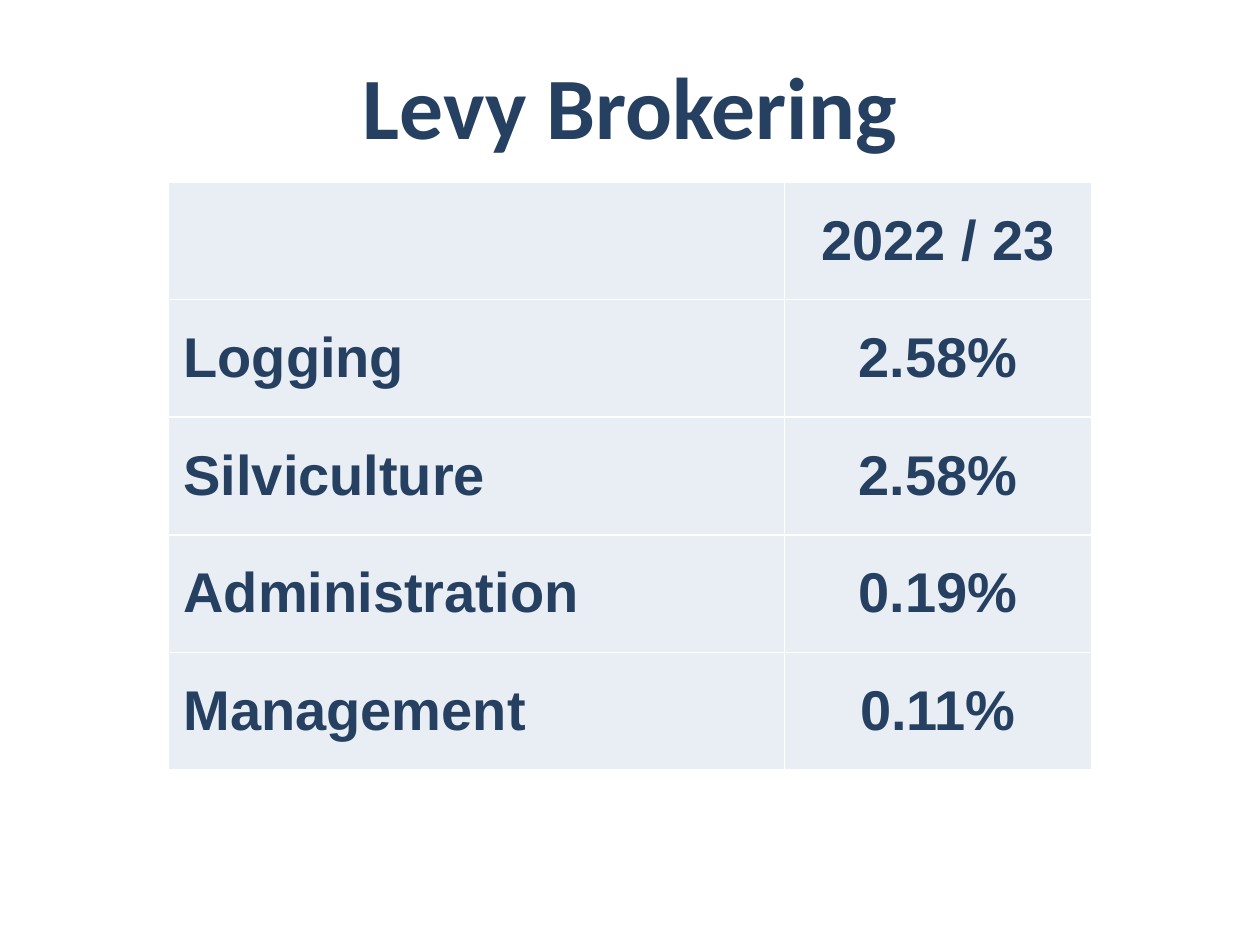
from lxml import etree
from pptx import Presentation
from pptx.enum.text import MSO_ANCHOR, PP_ALIGN
from pptx.dml.color import RGBColor
from pptx.oxml import parse_xml
from pptx.oxml.ns import nsdecls
from pptx.util import Cm, Pt

LEFT, CENTER = PP_ALIGN.LEFT, PP_ALIGN.CENTER
TOP, MIDDLE = MSO_ANCHOR.TOP, MSO_ANCHOR.MIDDLE
COLORS = {"text": "254061", "cell": "E9EDF4", "border": "FFFFFF"}


def write_text(frame, text, font="Arial", size=32, align=CENTER, spacing=None):
    paragraph = frame.paragraphs[0]
    paragraph.alignment = align
    paragraph.line_spacing = spacing
    run = paragraph.add_run()
    run.text = text
    run.font.name = font
    run.font.size = Pt(size)
    run.font.bold = True
    run.font.color.rgb = RGBColor.from_string(COLORS["text"])


def add_borders(cell):
    properties = cell._tc.get_or_add_tcPr()
    for index, side in enumerate(("lnL", "lnR", "lnT", "lnB")):
        border = parse_xml(f'<a:{side} {nsdecls("a")} w="{Pt(1)}"/>')
        fill = etree.SubElement(border, border.tag.replace(side, "solidFill"))
        etree.SubElement(fill, border.tag.replace(side, "srgbClr"), val=COLORS["border"])
        properties.insert(index, border)


presentation = Presentation()
presentation.slide_width = Cm(25.4)
presentation.slide_height = Cm(19.05)
slide = presentation.slides.add_slide(presentation.slide_layouts[6])

title = slide.shapes.add_textbox(Cm(1.27), Cm(1.17), Cm(22.86), Cm(3.18))
title.text_frame.word_wrap = True
title.text_frame.vertical_anchor = TOP
write_text(title.text_frame, "Levy Brokering", font="Calibri", size=50, spacing=0.9)

levy_rows = [
    ("", "2022 / 23"),
    ("Logging", "2.58%"),
    ("Silviculture", "2.58%"),
    ("Administration", "0.19%"),
    ("Management", "0.11%"),
]
column_widths = [12.42, 6.2]
row_height = 2.37
table = slide.shapes.add_table(
    len(levy_rows), len(column_widths), Cm(3.39), Cm(3.67),
    Cm(sum(column_widths)), Cm(row_height * len(levy_rows)),
).table
for column, width in zip(table.columns, column_widths):
    column.width = Cm(width)

for row_index, values in enumerate(levy_rows):
    table.rows[row_index].height = Cm(row_height)
    for column_index, value in enumerate(values):
        cell = table.cell(row_index, column_index)
        cell.fill.solid()
        cell.fill.fore_color.rgb = RGBColor.from_string(COLORS["cell"])
        cell.vertical_anchor = MIDDLE
        cell.margin_left = Cm(0 if column_index else 0.31)
        cell.margin_right = cell.margin_top = cell.margin_bottom = 0
        add_borders(cell)
        if value:
            write_text(cell.text_frame, value, align=CENTER if column_index else LEFT)

presentation.save("out.pptx")
